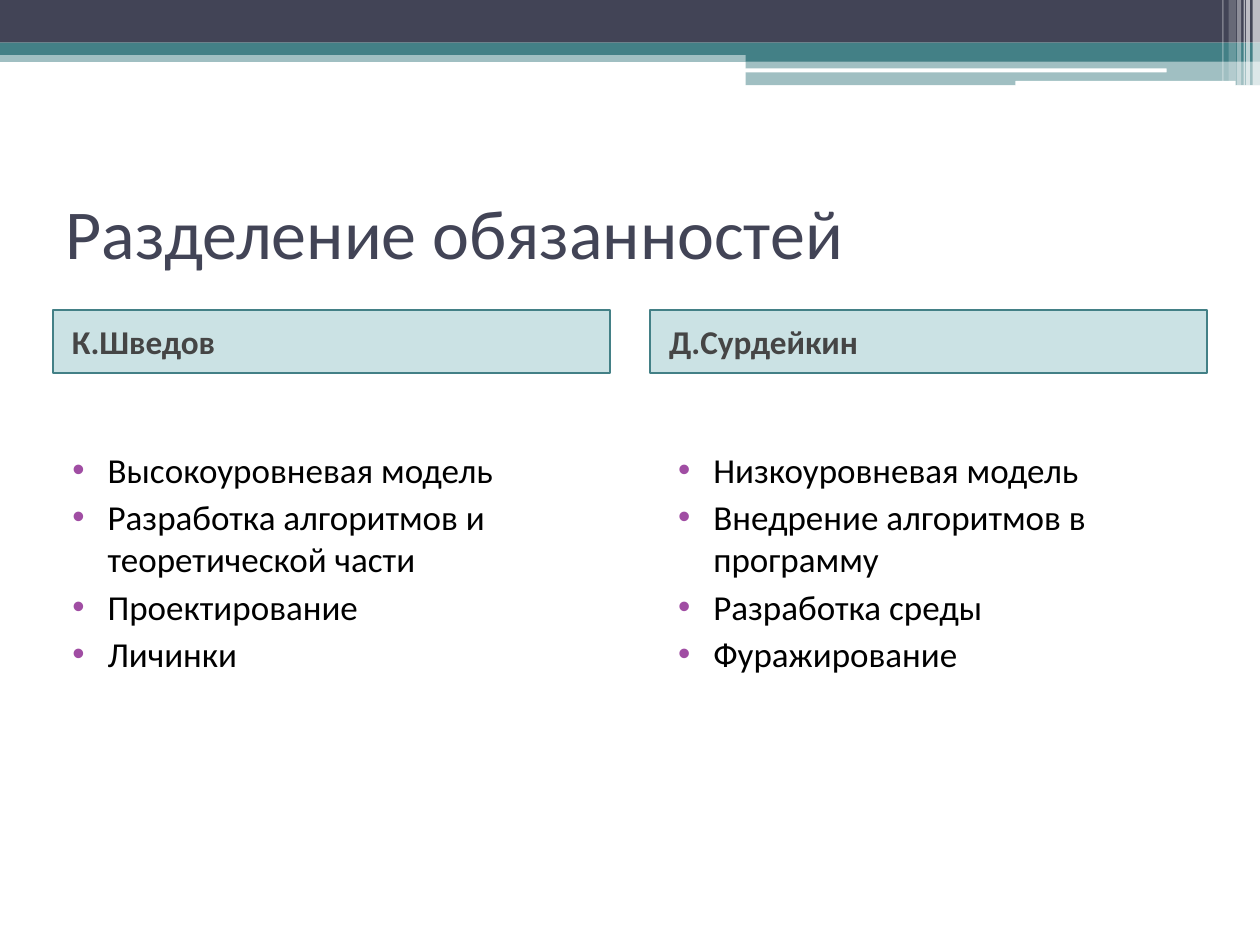
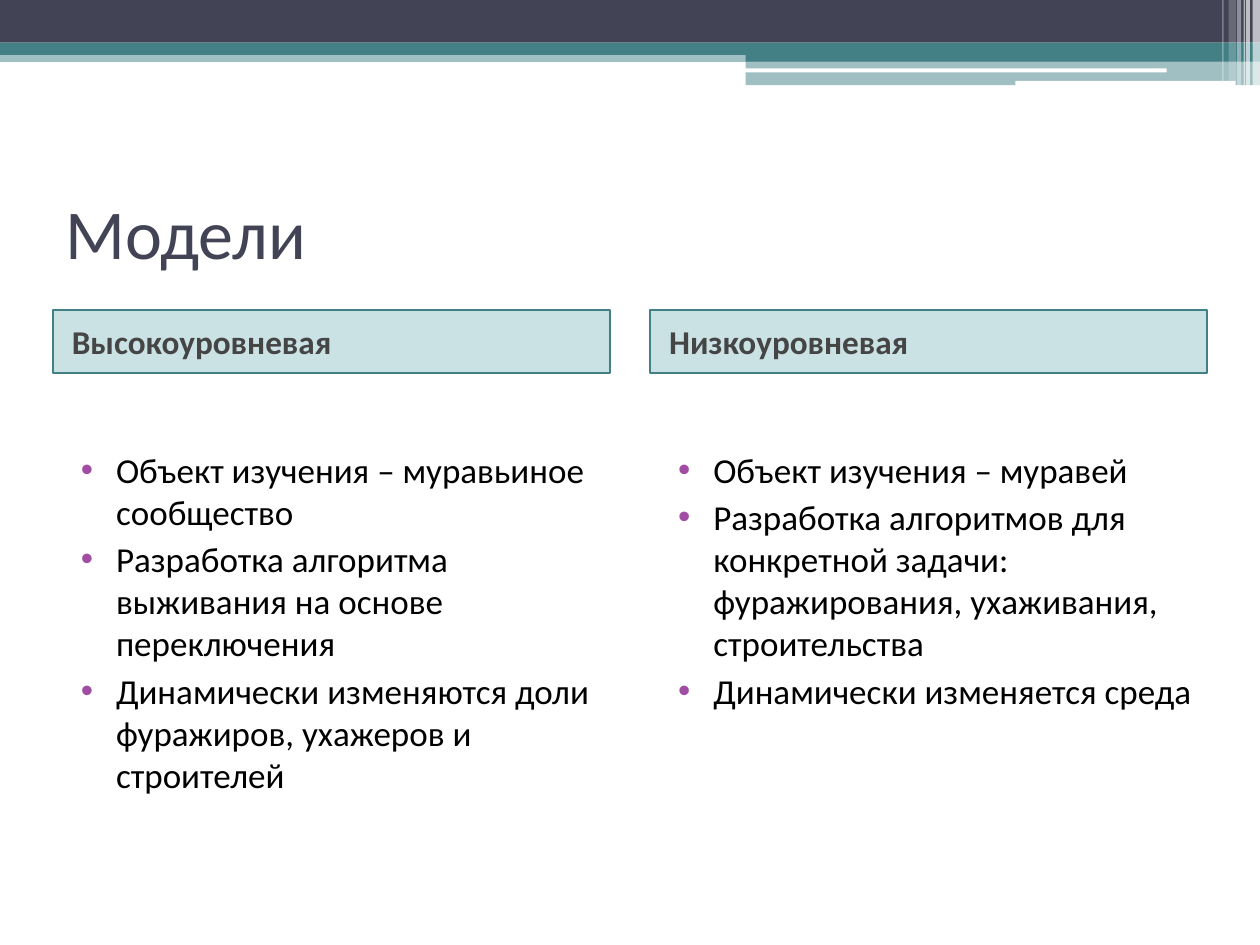
from lxml import etree
from pptx import Presentation
from pptx.dml.color import RGBColor
from pptx.enum.shapes import MSO_SHAPE
from pptx.enum.text import MSO_ANCHOR, PP_ALIGN
from pptx.oxml.ns import qn
from pptx.util import Cm, Pt

RECT = MSO_SHAPE.RECTANGLE
ROUNDED = MSO_SHAPE.ROUNDED_RECTANGLE
MIDDLE = MSO_ANCHOR.MIDDLE
LEFT = PP_ALIGN.LEFT

FONT = "Calibri"
COLORS = {
    "dark": "424456",
    "teal": "438086",
    "heading_fill": "328E97",
    "heading_text": "454545",
    "bullet": "A04DA3",
    "text": "000000",
    "white": "FFFFFF",
}

# Lengths in cm: left, top, width, height
SLIDE_WIDTH, SLIDE_HEIGHT = 25.4, 19.05
TITLE_BOX = (1.07, 3.18, 23.29, 2.97)
COLUMN_LEFTS = (1.07, 13.11)
COLUMN_WIDTH = 11.23
HEADING_TOP, HEADING_HEIGHT = 6.25, 1.27
LIST_TOP, LIST_HEIGHT = 8.92, 9.4

# Preset, box, colour, opacity in percent
BANDS = [
    (RECT, (0, 1.02, SLIDE_WIDTH, 0.23), "teal", 50),
    (RECT, (0, 0, SLIDE_WIDTH, 0.86), "dark", 100),
    (RECT, (0, 0.86, SLIDE_WIDTH, 0.25), "teal", 100),
    (RECT, (15.03, 0.99, 10.37, 0.25), "teal", 100),
    (RECT, (15.03, 1.23, 10.37, 0.49), "teal", 50),
    (ROUNDED, (15.02, 1.38, 8.5, 0.08), "white", 100),
    (ROUNDED, (20.47, 1.63, 4.44, 0.1), "white", 100),
]
# Left, width, height, opacity in percent
STRIPES = [
    (25.25, 0.15, 1.73, 65),
    (25.12, 0.08, 1.73, 65),
    (25.07, 0.03, 1.73, 60),
    (24.94, 0.08, 1.73, 40),
    (24.77, 0.15, 1.63, 20),
    (24.64, 0.03, 1.63, 30),
]

# Title, outdent of the left list in cm, columns of (heading, items)
SLIDES = [
    ("Разделение обязанностей", 0.17, [
        ("К.Шведов", [
            "Высокоуровневая модель",
            "Разработка алгоритмов и теоретической части",
            "Проектирование",
            "Личинки",
        ]),
        ("Д.Сурдейкин", [
            "Низкоуровневая модель",
            "Внедрение алгоритмов в программу",
            "Разработка среды",
            "Фуражирование",
        ]),
    ]),
    ("Модели", 0, [
        ("Высокоуровневая", [
            "Объект изучения – муравьиное сообщество",
            "Разработка алгоритма выживания на основе переключения",
            "Динамически изменяются доли фуражиров, ухажеров и строителей",
        ]),
        ("Низкоуровневая", [
            "Объект изучения – муравей",
            "Разработка алгоритмов для конкретной задачи: "
            "фуражирования, ухаживания, строительства",
            "Динамически изменяется среда",
        ]),
    ]),
]


def rgb(name):
    return RGBColor.from_string(COLORS[name])


def in_cm(box):
    return [Cm(length) for length in box]


def style_text(paragraph, size, color, bold=False):
    font = paragraph.font
    font.name, font.size, font.bold = FONT, Pt(size), bold
    font.color.rgb = rgb(color)
    paragraph.alignment = LEFT


def set_indent(paragraph, margin, first_line=0):
    properties = paragraph._p.get_or_add_pPr()
    properties.set("marL", str(Cm(margin)))
    properties.set("indent", str(Cm(first_line)))
    return properties


def add_bullet(paragraph):
    properties = set_indent(paragraph, 1.02, -0.71)
    bullet_color = etree.SubElement(properties, qn("a:buClr"))
    etree.SubElement(bullet_color, qn("a:srgbClr"), val=COLORS["bullet"])
    etree.SubElement(properties, qn("a:buFont"), typeface="Arial")
    etree.SubElement(properties, qn("a:buChar"), char="•")


def add_panel(slide, preset, box, color, opacity=100):
    """Add a filled shape without outline or shadow."""
    panel = slide.shapes.add_shape(preset, *in_cm(box))
    panel.shadow.inherit = False
    panel.line.fill.background()
    panel.fill.solid()
    panel.fill.fore_color.rgb = rgb(color)
    if opacity < 100:
        fill_color = panel._element.spPr.find(".//" + qn("a:srgbClr"))
        etree.SubElement(fill_color, qn("a:alpha"), val=str(opacity * 1000))
    return panel


def add_header(slide):
    for preset, box, color, opacity in BANDS:
        add_panel(slide, preset, box, color, opacity)
    for left, width, height, opacity in STRIPES:
        add_panel(slide, RECT, (left, 0, width, height), "white", opacity)


def set_title(slide, text):
    title = slide.shapes.title
    title.left, title.top, title.width, title.height = in_cm(TITLE_BOX)
    title.text_frame.text = text
    title.text_frame.vertical_anchor = MIDDLE
    style_text(title.text_frame.paragraphs[0], 40, "dark")


def add_heading(slide, box, text):
    heading = add_panel(slide, RECT, box, "heading_fill", 25)
    heading.line.color.rgb = rgb("teal")
    heading.line.width = Pt(1)
    heading.text_frame.text = text
    heading.text_frame.vertical_anchor = MIDDLE
    paragraph = heading.text_frame.paragraphs[0]
    style_text(paragraph, 19, "heading_text", bold=True)
    paragraph.space_before = Pt(3)
    set_indent(paragraph, 0.13)


def add_list(slide, box, items):
    frame = slide.shapes.add_textbox(*in_cm(box)).text_frame
    frame.word_wrap = True
    frame.text = "\n".join(items)
    for paragraph in frame.paragraphs:
        style_text(paragraph, 20, "text")
        paragraph.space_before = Pt(3)
        add_bullet(paragraph)


def add_comparison_slide(deck, title, outdent, columns):
    slide = deck.slides.add_slide(deck.slide_layouts[5])
    add_header(slide)
    set_title(slide, title)
    for left, shift, (heading, items) in zip(COLUMN_LEFTS, (outdent, 0), columns):
        add_heading(slide, (left, HEADING_TOP, COLUMN_WIDTH, HEADING_HEIGHT), heading)
        list_box = (left - shift, LIST_TOP, COLUMN_WIDTH + shift, LIST_HEIGHT)
        add_list(slide, list_box, items)


def main():
    deck = Presentation()
    deck.slide_width, deck.slide_height = Cm(SLIDE_WIDTH), Cm(SLIDE_HEIGHT)
    for title, outdent, columns in SLIDES:
        add_comparison_slide(deck, title, outdent, columns)
    deck.save("out.pptx")


if __name__ == "__main__":
    main()
